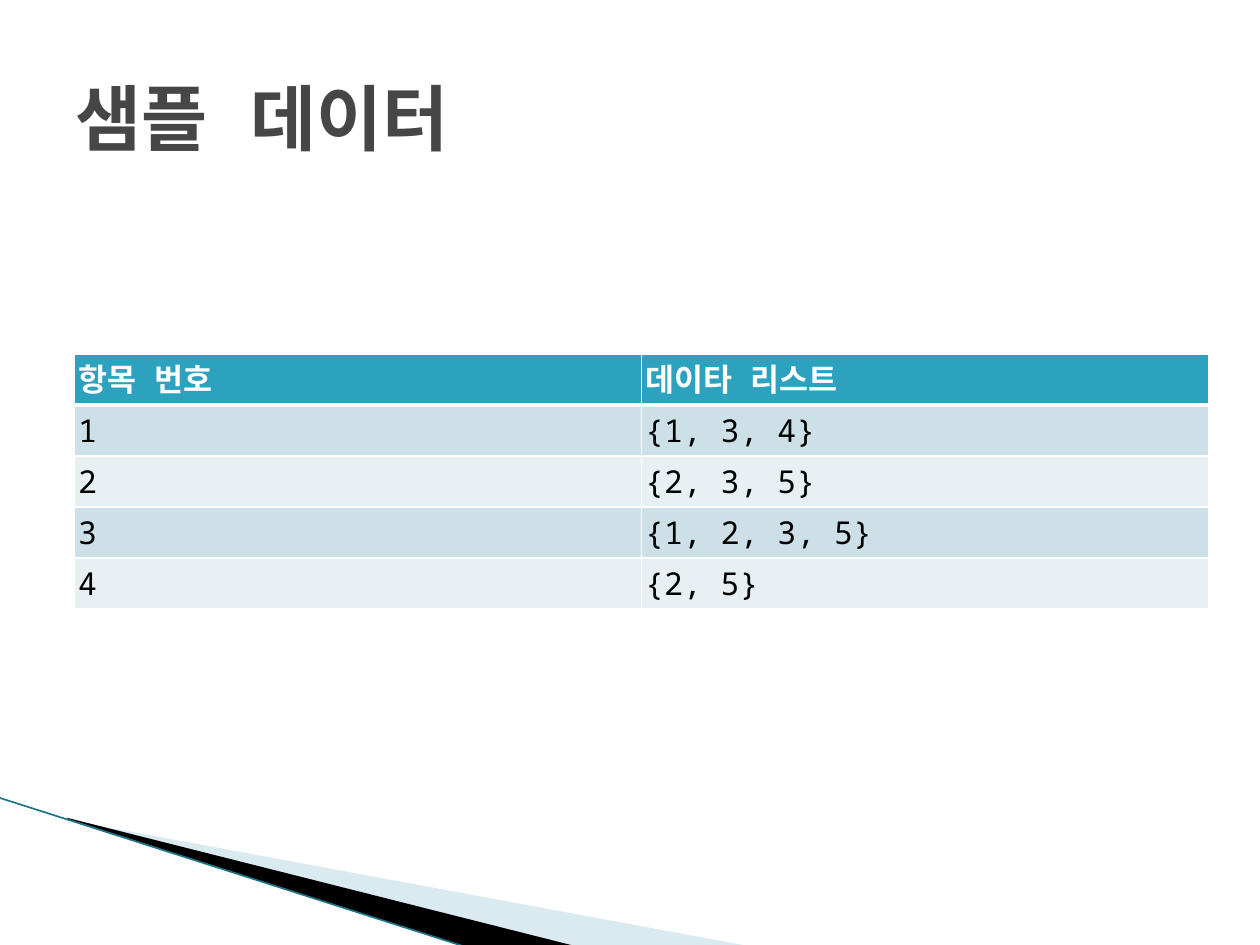
from lxml import etree
from pptx import Presentation
from pptx import util as u
from pptx.dml.color import RGBColor
from pptx.enum import text
from pptx.oxml.ns import qn

FONT = "Noto Sans Mono"
COLORS = {
    "title": "464646", "header": "2DA2BF", "odd": "CDE0E8", "even": "E8F0F4",
    "white": "FFFFFF", "black": "000000", "pale": "A0CBDC", "teal": "1B7587",
}
TITLE = "샘플 데이터"
ROWS = [
    ("항목 번호", "데이타 리스트"),
    ("1", "{1, 3, 4}"),
    ("2", "{2, 3, 5}"),
    ("3", "{1, 2, 3, 5}"),
    ("4", "{2, 5}"),
]
# Outline points in inches, colour, opacity in percent
WEDGES = [
    ([(0.55, 6.51), (5.95, 7.51), (4.56, 7.51), (0.55, 6.5)], "pale", 40),
    ([(0.53, 6.49), (4.57, 7.51), (3.72, 7.52), (0.54, 6.5)], "black", 100),
]
EDGE = [(-0.01, 6.33), (3.71, 7.52)]
TABLE_LEFT, TABLE_TOP, COLUMN_WIDTH, ROW_HEIGHT = 0.59, 2.81, 4.5, 0.405
CELL_MARGIN = 0.03


def rgb(name):
    return RGBColor.from_string(COLORS[name])


def add_run(paragraph, content, size, color, bold):
    run = paragraph.add_run()
    run.text = content
    run.font.size, run.font.bold, run.font.name = u.Pt(size), bold, FONT
    run.font.color.rgb = rgb(color)
    etree.SubElement(run.font._element, qn("a:ea"), typeface=FONT)


def add_wedge(slide, points, color, opacity):
    corners = [(u.Inches(x), u.Inches(y)) for x, y in points]
    builder = slide.shapes.build_freeform(*corners[0])
    builder.add_line_segments(corners[1:], close=True)
    shape = builder.convert_to_shape()
    shape.shadow.inherit = False
    shape.fill.solid()
    shape.fill.fore_color.rgb = rgb(color)
    shape.line.fill.background()
    if opacity < 100:
        fill_color = shape._element.spPr.find(".//" + qn("a:srgbClr"))
        etree.SubElement(fill_color, qn("a:alpha"), val=str(opacity * 1000))


def add_edge(slide):
    (x1, y1), (x2, y2) = EDGE
    line = slide.shapes.add_connector(
        1, u.Inches(x1), u.Inches(y1), u.Inches(x2), u.Inches(y2))
    line.line.color.rgb = rgb("teal")
    line.line.width = u.Pt(0.95)
    etree.SubElement(line._element.spPr, qn("a:effectLst"))


def set_borders(cell, widths):
    """Draw white borders; widths maps side tags (lnL, lnR, lnT, lnB) to points."""
    properties = cell._tc.get_or_add_tcPr()
    for index, (side, width) in enumerate(widths.items()):
        border = etree.Element(qn("a:" + side), w=str(u.Pt(width)))
        fill = etree.SubElement(border, qn("a:solidFill"))
        etree.SubElement(fill, qn("a:srgbClr"), val=COLORS["white"])
        properties.insert(index, border)


def add_data_table(slide):
    table = slide.shapes.add_table(
        len(ROWS), len(ROWS[0]), u.Inches(TABLE_LEFT), u.Inches(TABLE_TOP),
        u.Inches(COLUMN_WIDTH * len(ROWS[0])), u.Inches(ROW_HEIGHT * len(ROWS))).table
    for r, row in enumerate(ROWS):
        header = r == 0
        fill = "header" if header else "odd" if r % 2 else "even"
        widths = {"lnL": 1, "lnR": 1, "lnT": 3 if r == 1 else 1, "lnB": 3 if header else 1}
        for c, content in enumerate(row):
            cell = table.cell(r, c)
            cell.fill.solid()
            cell.fill.fore_color.rgb = rgb(fill)
            cell.vertical_anchor = text.MSO_ANCHOR.MIDDLE
            cell.margin_left = cell.margin_right = u.Inches(CELL_MARGIN)
            cell.margin_top = cell.margin_bottom = u.Inches(CELL_MARGIN)
            add_run(cell.text_frame.paragraphs[0], content, 18,
                    "white" if header else "black", header)
            set_borders(cell, widths)


def format_title(title):
    title.left, title.top = u.Inches(0.5), u.Inches(0.3)
    title.width, title.height = u.Inches(9), u.Inches(1.25)
    title.text_frame.vertical_anchor = text.MSO_ANCHOR.MIDDLE
    paragraph = title.text_frame.paragraphs[0]
    paragraph.alignment = text.PP_ALIGN.LEFT
    add_run(paragraph, TITLE, 41, "title", True)


def main():
    presentation = Presentation()
    presentation.slide_width, presentation.slide_height = u.Inches(10), u.Inches(7.5)
    slide = presentation.slides.add_slide(presentation.slide_layouts[5])
    slide.background.fill.solid()
    slide.background.fill.fore_color.rgb = rgb("white")
    for wedge in WEDGES:
        add_wedge(slide, *wedge)
    add_edge(slide)
    add_data_table(slide)
    format_title(slide.shapes.title)
    presentation.save("out.pptx")


if __name__ == "__main__":
    main()
